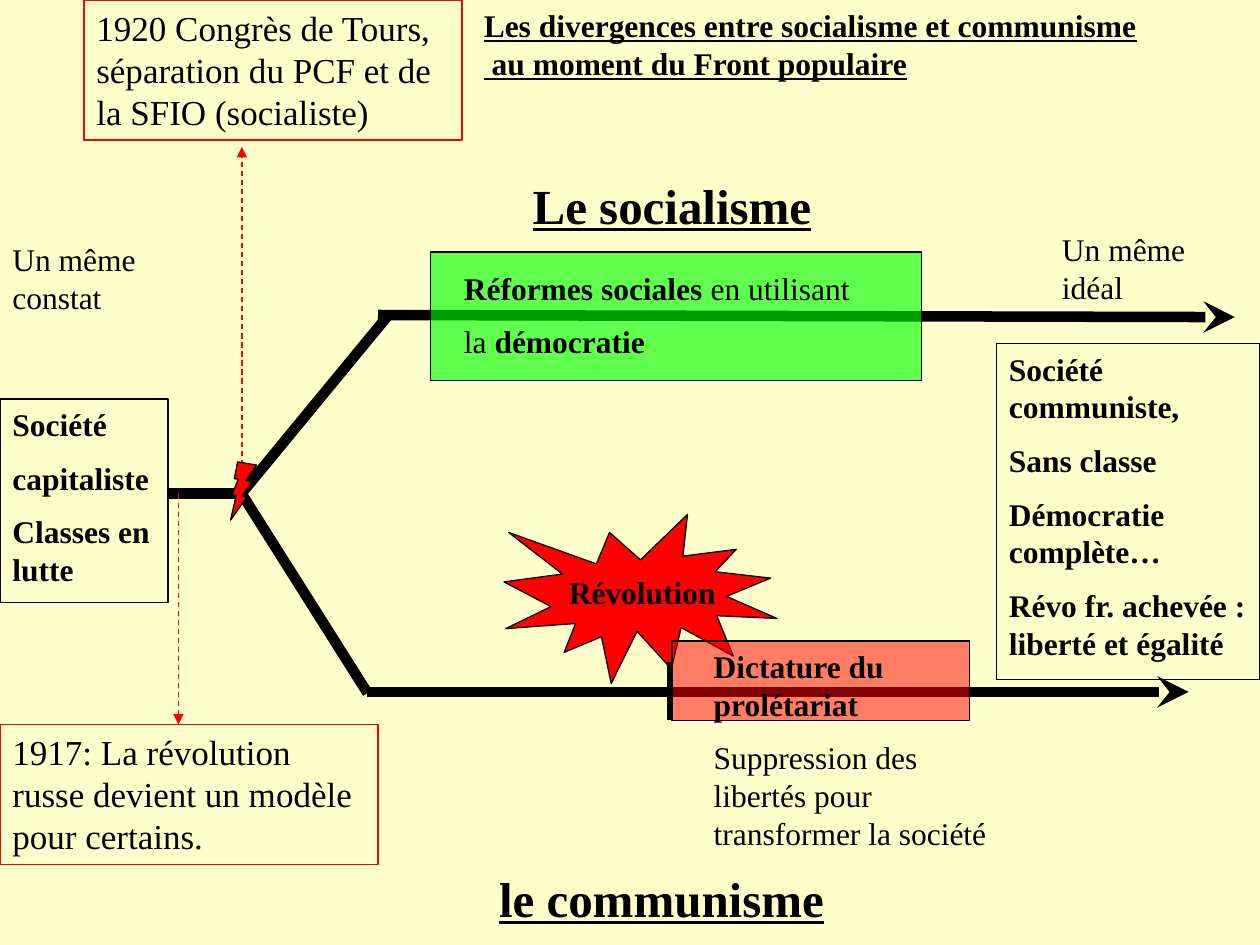
from lxml.etree import SubElement
from pptx import Presentation
from pptx.dml.color import RGBColor
from pptx.enum.dml import MSO_LINE
from pptx.enum.shapes import MSO_CONNECTOR, MSO_SHAPE
from pptx.enum.text import MSO_ANCHOR, PP_ALIGN
from pptx.oxml.ns import qn
from pptx.util import Inches, Pt

CREAM = RGBColor(0xFF, 0xFF, 0xCC)
BLACK = RGBColor(0, 0, 0)
RED = RGBColor(0xFF, 0, 0)
GREEN = RGBColor(0, 0xFF, 0)
FONT = "Times New Roman"

# Every position and size is in cells of a 120 x 90 grid.
COLUMNS, ROWS = 120, 90
CELL = Inches(10) / COLUMNS

# Points of the two roads from capitalism to communism
START, FORK = (16, 47), (23, 47)
SOCIALIST_BEND, COMMUNIST_BEND = (37, 30), (35, 66)
SOCIALIST_ROAD = ((36, 30), (117.6, 30.2))
COMMUNIST_ROAD = ((35, 65.9), (113.2, 65.9))
BARRIER = ((63.75, 63), (63.75, 68.6))

# Text between asterisks is bold; each string is a paragraph.
SOCIALISM = ["*Le socialisme*"]
COMMUNISM = ["*le communisme*"]
HEADING = ["*Les divergences entre socialisme et communisme*",
           "* au moment du Front populaire*"]
REFORMS = ["*Réformes sociales* en utilisant", "la *démocratie*"]
DICTATORSHIP = ["*Dictature du prolétariat*",
                "Suppression des libertés pour transformer la société"]
IDEAL_SOCIETY = ["*Société communiste,*", "*Sans classe*", "*Démocratie complète…*",
                 "*Révo fr. achevée : liberté et égalité*"]
CAPITALIST_SOCIETY = ["*Société*", "*capitaliste*", "*Classes en lutte*"]
TOURS_1920 = ["1920 Congrès de Tours, séparation du PCF et de la SFIO (socialiste)"]
RUSSIA_1917 = ["1917: La révolution russe devient un modèle pour certains."]
SAME_FINDING = ["Un même\vconstat"]
SAME_IDEAL = ["Un même\vidéal"]

presentation = Presentation()
presentation.slide_width, presentation.slide_height = round(COLUMNS * CELL), round(ROWS * CELL)
slide = presentation.slides.add_slide(presentation.slide_layouts[6])
slide.background.fill.solid()
slide.background.fill.fore_color.rgb = CREAM


def cells(*values):
    return [round(value * CELL) for value in values]


def add_text(paragraphs, box, size=18, underline=False, align=PP_ALIGN.LEFT,
             anchor=MSO_ANCHOR.TOP, gap=0.5, border=None):
    """Add a text box; gap is the space between paragraphs as a share of the size."""
    shape = slide.shapes.add_textbox(*cells(*box))
    if border is not None:
        shape.line.color.rgb = border
        shape.line.width = Pt(0.75)
    frame = shape.text_frame
    frame.word_wrap = True
    frame.vertical_anchor = anchor
    for index, content in enumerate(paragraphs):
        paragraph = frame.paragraphs[0] if index == 0 else frame.add_paragraph()
        paragraph.alignment = align
        paragraph.space_before = Pt(size * gap if index else 0)
        for part, words in enumerate(content.split("*")):
            for line_number, line in enumerate(words.split("\v")):
                if line_number:
                    paragraph.add_line_break()
                if not line:
                    continue
                run = paragraph.add_run()
                run.text = line
                run.font.name, run.font.size = FONT, Pt(size)
                run.font.color.rgb = BLACK
                run.font.bold = part % 2 == 1
                run.font.underline = underline


def add_figure(preset, box, fill, opacity=100):
    shape = slide.shapes.add_shape(preset, *cells(*box))
    shape.shadow.inherit = False
    shape.fill.solid()
    shape.fill.fore_color.rgb = fill
    if opacity < 100:
        color = shape.fill._xPr.find(".//" + qn("a:srgbClr"))
        SubElement(color, qn("a:alpha"), val=str(opacity * 1000))
    shape.line.color.rgb = BLACK
    shape.line.width = Pt(0.75)
    return shape


def add_line(start, end, width=6, color=BLACK, dashed=False, arrow=None):
    connector = slide.shapes.add_connector(MSO_CONNECTOR.STRAIGHT, *cells(*start, *end))
    connector.line.color.rgb = color
    connector.line.width = Pt(width)
    if dashed:
        connector.line.dash_style = MSO_LINE.DASH
    if arrow:
        SubElement(connector.line._get_or_add_ln(), qn("a:tailEnd"), type=arrow)
    SubElement(connector._element.spPr, qn("a:effectLst"))


def add_title(paragraphs, box):
    add_text(paragraphs, box, size=28, underline=True,
             align=PP_ALIGN.CENTER, anchor=MSO_ANCHOR.MIDDLE)


def add_date_arrow(start, end):
    add_line(start, end, width=0.75, color=RED, dashed=True, arrow="triangle")


# Socialist road
add_figure(MSO_SHAPE.EXPLOSION1, (48, 49, 26, 16.1), RED)
add_title(SOCIALISM, (10, 12, 108, 15))
add_line(*SOCIALIST_ROAD, arrow="stealth")
add_figure(MSO_SHAPE.RECTANGLE, (41, 24, 46.8, 12.25), GREEN, opacity=62)
add_text(REFORMS, (43, 25, 54.8, 10.2))
add_text(IDEAL_SOCIETY, (94.9, 32.7, 25.1, 32), border=BLACK)

# Communist road
add_title(COMMUNISM, (9, 78, 108, 15))
add_line(*COMMUNIST_ROAD, arrow="stealth")
add_line(*BARRIER, width=3)
add_figure(MSO_SHAPE.RECTANGLE, (64, 61.05, 28.35, 7.55), RED, opacity=51)
add_text(DICTATORSHIP, (66.8, 61, 29, 21))
add_text(["*Révolution*"], (53, 54, 18, 4.8))

# Common start and fork
add_text(CAPITALIST_SOCIETY, (0, 38, 16, 19.4), border=BLACK)
add_line(START, FORK)
for bend in (SOCIALIST_BEND, COMMUNIST_BEND):
    add_line(FORK, bend)

# Dates
add_date_arrow((23.04, 46), (23.04, 14))
bolt = add_figure(MSO_SHAPE.LIGHTNING_BOLT, (21, 44, 4.1, 5), RED)
bolt.rotation = 340.4
bolt._element.spPr.xfrm.set("flipH", "1")
add_text(TOURS_1920, (8, 0, 36, 13.35), size=20, border=RED)
add_date_arrow((17, 47), (17, 69))
add_text(RUSSIA_1917, (0, 69, 36, 13.35), size=20, border=RED)

# Remarks and heading
add_text(SAME_FINDING, (0, 22.3, 23, 4.8))
add_text(SAME_IDEAL, (99.96, 21.35, 20, 4.8))
add_text(HEADING, (44.9, 0, 65.5, 8.4), underline=True, gap=0)

presentation.save("out.pptx")
